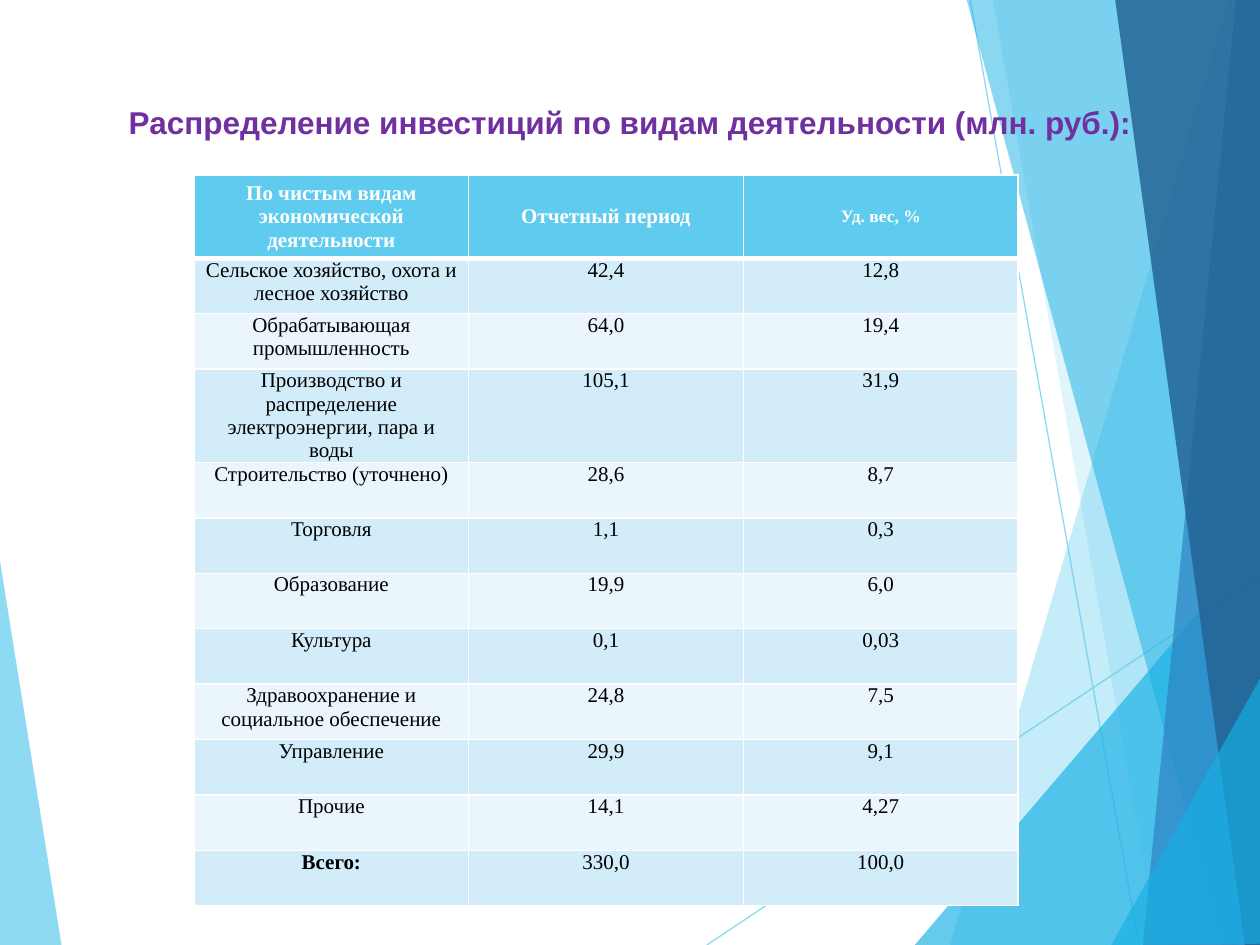
from lxml.etree import SubElement
from pptx import Presentation
from pptx.dml.color import RGBColor
from pptx.enum.shapes import MSO_CONNECTOR
from pptx.enum.text import MSO_ANCHOR, PP_ALIGN
from pptx.oxml.ns import qn
from pptx.util import Inches, Pt

COLORS = {
    "sky": "5FCBEF", "cyan": "17B0E4", "blue": "2E83C3", "navy": "226292",
    "purple": "7030A0", "white": "FFFFFF", "black": "000000",
    "band_dark": "D2ECF9", "band_light": "EAF6FC",
}

# Backdrop: points in inches, colour, opacity in percent
LEFT_WEDGE = ([(-0.01, 4.39), (0.49, 7.51), (-0.01, 7.5)], "sky", 70)
RAYS = [((5.61, 7.5), (10.01, 4.57)), ((7.7, 0), (9.04, 7.5))]
RIGHT_FACETS = [
    ([(9.75, 0), (7.54, 7.5), (10.02, 7.51), (10.01, 0.01)], "sky", 36),
    ([(7.88, -0.01), (9.19, 7.5), (10.01, 7.5), (10.01, -0.01)], "sky", 20),
    ([(7.26, 7.5), (10, 4.29), (10.01, 7.5)], "cyan", 66),
    ([(7.67, -0.01), (9.7, 7.5), (10.01, 7.49), (10.01, -0.01)], "cyan", 50),
    ([(9.81, -0.01), (9.07, 7.5), (10.01, 7.5), (10, -0.01)], "blue", 70),
    ([(8.85, -0.01), (9.88, 7.5), (10.02, 7.5), (10, -0.01)], "navy", 82),
    ([(8.82, 7.5), (10.02, 5.35), (10.02, 7.49)], "cyan", 66),
]

HEADER = ["По чистым видам экономической деятельности", "Отчетный период", "Уд. вес, %"]
INVESTMENTS = [
    ("Сельское хозяйство, охота и лесное хозяйство", "42,4", "12,8"),
    ("Обрабатывающая промышленность", "64,0", "19,4"),
    ("Производство и распределение электроэнергии, пара и воды", "105,1", "31,9"),
    ("Строительство (уточнено)", "28,6", "8,7"),
    ("Торговля", "1,1", "0,3"),
    ("Образование", "19,9", "6,0"),
    ("Культура", "0,1", "0,03"),
    ("Здравоохранение и социальное обеспечение", "24,8", "7,5"),
    ("Управление", "29,9", "9,1"),
    ("Прочие", "14,1", "4,27"),
    ("Всего:", "330,0", "100,0"),
]
TALL_ROWS = (0, 3)


def rgb(name):
    return RGBColor.from_string(COLORS[name])


def write_text(frame, text, size=12, font="Times New Roman", color="black", bold=False):
    paragraph = frame.paragraphs[0]
    paragraph.alignment = PP_ALIGN.CENTER
    run = paragraph.add_run()
    run.text = text
    run.font.size = Pt(size)
    run.font.name = font
    run.font.bold = bold
    run.font.color.rgb = rgb(color)


def set_opacity(shape, percent):
    for color in shape._element.spPr.iter(qn("a:srgbClr")):
        SubElement(color, qn("a:alpha"), val=str(percent * 1000))


def add_facet(slide, points, color, opacity):
    corners = [(Inches(x), Inches(y)) for x, y in points]
    builder = slide.shapes.build_freeform(*corners[0])
    builder.add_line_segments(corners[1:], close=True)
    facet = builder.convert_to_shape()
    facet.shadow.inherit = False
    facet.fill.solid()
    facet.fill.fore_color.rgb = rgb(color)
    facet.line.fill.background()
    set_opacity(facet, opacity)


def add_ray(slide, start, end):
    ray = slide.shapes.add_connector(
        MSO_CONNECTOR.STRAIGHT, *(Inches(value) for value in start + end))
    ray.line.color.rgb = rgb("sky")
    ray.line.width = Pt(0.75)
    set_opacity(ray, 70)
    SubElement(ray._element.spPr, qn("a:effectLst"))


def add_title(slide, text):
    title = slide.shapes.title
    title.left, title.top = Inches(0.5), Inches(0.77)
    title.width, title.height = Inches(9), Inches(0.62)
    title.text_frame.vertical_anchor = MSO_ANCHOR.TOP
    write_text(title.text_frame, text, size=18, font="Arial", color="purple", bold=True)
    # Bring the title in front of the backdrop
    slide.shapes._spTree.append(title._element)


def set_borders(cell, **widths):
    properties = cell._tc.get_or_add_tcPr()
    for side in "LRTB":
        width = widths.get(side, 1)
        border = SubElement(properties, qn(f"a:ln{side}"), w=str(Pt(width)))
        fill = SubElement(border, qn("a:solidFill"))
        SubElement(fill, qn("a:srgbClr"), val=COLORS["white"])


def format_cell(cell, fill, anchor=MSO_ANCHOR.TOP, **borders):
    cell.margin_left = cell.margin_right = Inches(0.07)
    cell.margin_top = cell.margin_bottom = 0
    cell.vertical_anchor = anchor
    set_borders(cell, **borders)
    cell.fill.solid()
    cell.fill.fore_color.rgb = rgb(fill)


def add_investment_table(slide):
    row_count = len(INVESTMENTS) + 1
    table = slide.shapes.add_table(
        row_count, len(HEADER), Inches(1.54), Inches(1.39),
        Inches(6.54), Inches(5.72)).table
    table.horz_banding = False
    for column in table.columns:
        column.width = Inches(2.18)
    for index, row in enumerate(table.rows):
        row.height = Inches(0.66 if index in TALL_ROWS else 0.44)

    # Header row
    for cell, text, size in zip(table.rows[0].cells, HEADER, (12, 12, 10)):
        format_cell(cell, "sky", anchor=MSO_ANCHOR.MIDDLE, B=3)
        write_text(cell.text_frame, text, size=size, color="white", bold=True)

    # Activities, with the total last
    for index, values in enumerate(INVESTMENTS, start=1):
        band = "band_dark" if index % 2 else "band_light"
        for cell, text in zip(table.rows[index].cells, values):
            format_cell(cell, band, T=3 if index == 1 else 1)
            write_text(cell.text_frame, text, bold=text == "Всего:")


def main():
    presentation = Presentation()
    presentation.slide_width, presentation.slide_height = Inches(10), Inches(7.5)
    slide = presentation.slides.add_slide(presentation.slide_layouts[5])

    # Backdrop
    add_facet(slide, *LEFT_WEDGE)
    for start, end in RAYS:
        add_ray(slide, start, end)
    for facet in RIGHT_FACETS:
        add_facet(slide, *facet)

    # Content
    add_title(slide, "Распределение инвестиций по видам деятельности (млн. руб.):")
    add_investment_table(slide)
    presentation.save("out.pptx")


if __name__ == "__main__":
    main()
